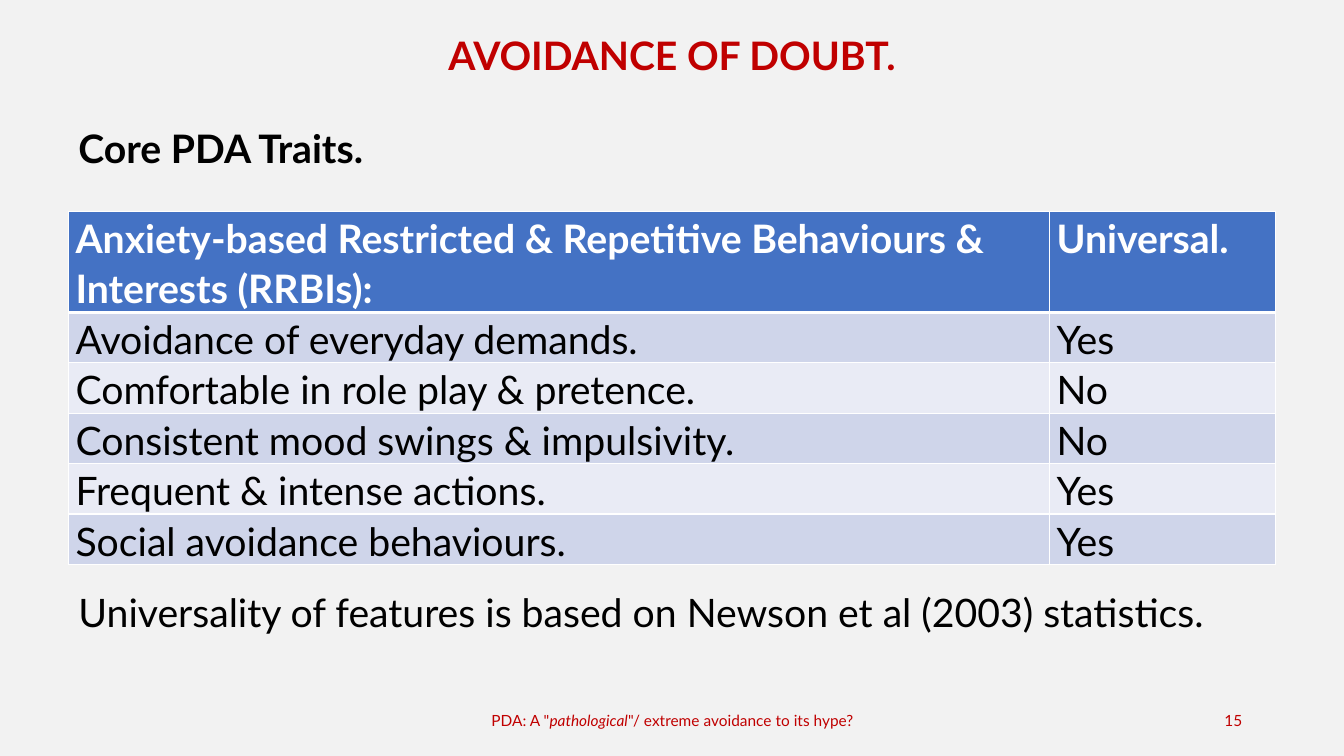
from lxml.etree import SubElement
from pptx import Presentation
from pptx.dml.color import RGBColor
from pptx.enum.text import MSO_ANCHOR, PP_ALIGN
from pptx.oxml.ns import qn
from pptx.util import Inches, Pt

BACKGROUND = RGBColor(0xF2, 0xF2, 0xF2)
RED = RGBColor(0xC0, 0x00, 0x00)
BLACK = RGBColor(0x00, 0x00, 0x00)
WHITE = RGBColor(0xFF, 0xFF, 0xFF)
HEADER_BLUE = RGBColor(0x44, 0x72, 0xC4)
BAND_DARK = RGBColor(0xCF, 0xD5, 0xEA)
BAND_LIGHT = RGBColor(0xE9, 0xEB, 0xF5)

LEFT, WIDTH = 0.68, 11.97
HEADING = {"size": Pt(28), "bold": True}
BODY = {"size": Pt(28), "bold": False}
FOOTER = {"size": Pt(11)}

TRAITS = [
    ("Anxiety-based Restricted & Repetitive Behaviours & Interests (RRBIs):", "Universal."),
    ("Avoidance of everyday demands.", "Yes"),
    ("Comfortable in role play & pretence.", "No"),
    ("Consistent mood swings & impulsivity.", "No"),
    ("Frequent & intense actions.", "Yes"),
    ("Social avoidance behaviours.", "Yes"),
]


def set_attrs(target, values):
    for name, value in values.items():
        setattr(target, name, value)


def add_run(p, text, color, style):
    r = p.add_run()
    r.text = text
    set_attrs(r.font, {"name": "Lato", **style})
    r.font.color.rgb = color


def add_text(s, box, runs, color, align=PP_ALIGN.LEFT, anchor=MSO_ANCHOR.TOP):
    tf = s.shapes.add_textbox(*map(Inches, box)).text_frame
    set_attrs(tf, {"word_wrap": True, "vertical_anchor": anchor})
    p = tf.paragraphs[0]
    p.alignment = align
    for text, style in runs:
        add_run(p, text, color, style)


def add_borders(cell, widths):
    tcPr = cell._tc.get_or_add_tcPr()
    for side, width in zip("LRTB", widths):
        ln = SubElement(tcPr, qn(f"a:ln{side}"), w=str(Pt(width)))
        fill = SubElement(ln, qn("a:solidFill"))
        SubElement(fill, qn("a:srgbClr"), val=str(WHITE))


def fill_cell(cell, text, row):
    header = row == 0
    add_borders(cell, (1, 1, 3 if row == 1 else 1, 3 if header else 1))
    cell.fill.solid()
    cell.fill.fore_color.rgb = HEADER_BLUE if header else BAND_DARK if row % 2 else BAND_LIGHT
    set_attrs(cell, {"margin_left": Inches(0.07), "margin_right": Inches(0.07),
                     "margin_top": 0, "margin_bottom": 0})
    p = cell.text_frame.paragraphs[0]
    set_attrs(p, {"line_spacing": 1.07, "space_after": Pt(8)})
    add_run(p, text, WHITE if header else BLACK, HEADING if header else BODY)


def add_traits_table(s):
    frame = s.shapes.add_table(len(TRAITS), 2, Inches(LEFT), Inches(2.1), Inches(WIDTH), Inches(3.5))
    table = frame.table
    for column, width in zip(table.columns, (9.73, 2.24)):
        column.width = Inches(width)
    for row, texts in enumerate(TRAITS):
        table.rows[row].height = Inches(0.5 if row else 1)
        for column, text in enumerate(texts):
            fill_cell(table.cell(row, column), text, row)


def main():
    prs = Presentation()
    set_attrs(prs, {"slide_width": Inches(13.33), "slide_height": Inches(7.5)})
    s = prs.slides.add_slide(prs.slide_layouts[6])
    s.background.fill.solid()
    s.background.fill.fore_color.rgb = BACKGROUND

    add_text(s, (LEFT, 0.26, WIDTH, 0.57), [("AVOIDANCE OF DOUBT.", HEADING)], RED, PP_ALIGN.CENTER)
    add_text(s, (LEFT, 1.18, WIDTH, 0.57), [("Core PDA Traits.", HEADING)], BLACK)
    add_traits_table(s)
    add_text(s, (LEFT, 5.79, WIDTH, 0.57),
             [("Universality of features is based on Newson et al (2003) statistics.", BODY)], BLACK)
    footer = [("PDA: A \"", FOOTER), ("pathological", {**FOOTER, "italic": True}),
              ("\"/ extreme avoidance to its hype?", FOOTER)]
    add_text(s, (4.42, 6.95, 4.5, 0.4), footer, RED, PP_ALIGN.CENTER, MSO_ANCHOR.MIDDLE)
    add_text(s, (9.42, 6.95, 3, 0.4), [("15", FOOTER)], RED, PP_ALIGN.RIGHT, MSO_ANCHOR.MIDDLE)
    prs.save("out.pptx")


if __name__ == "__main__":
    main()
